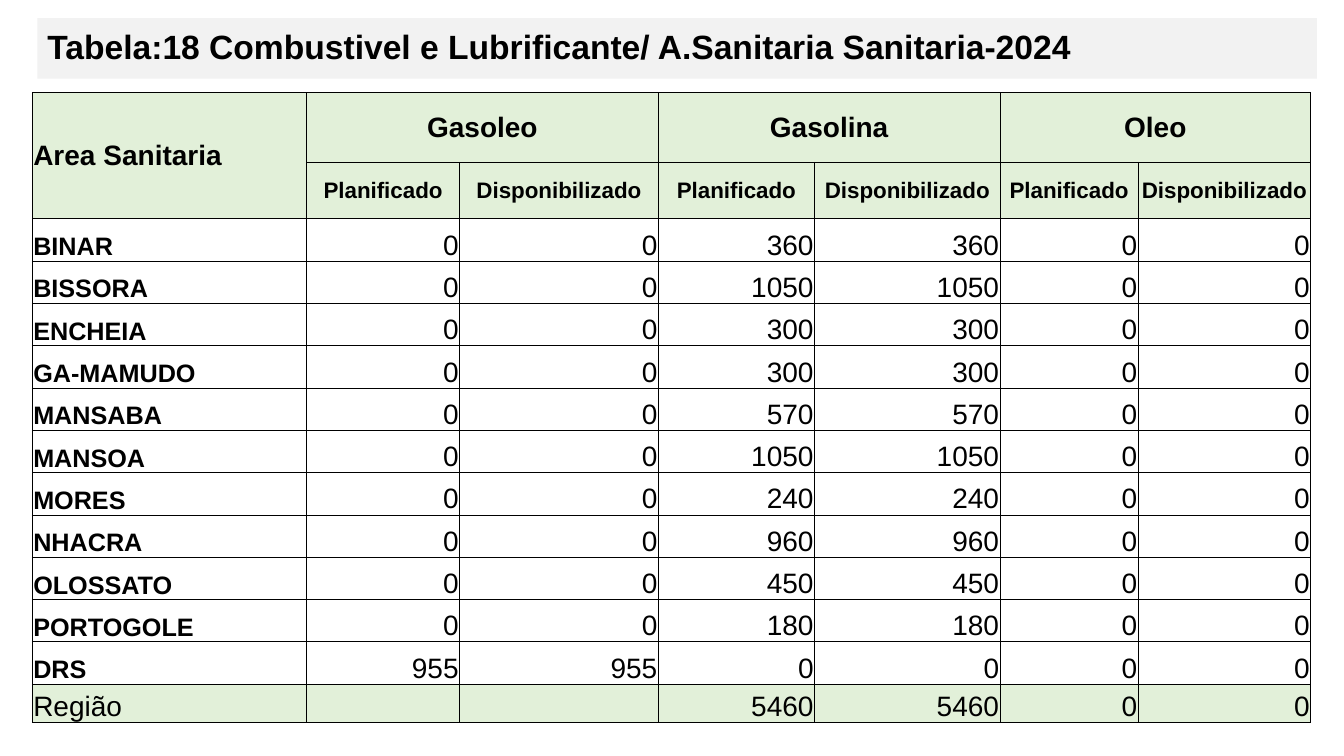
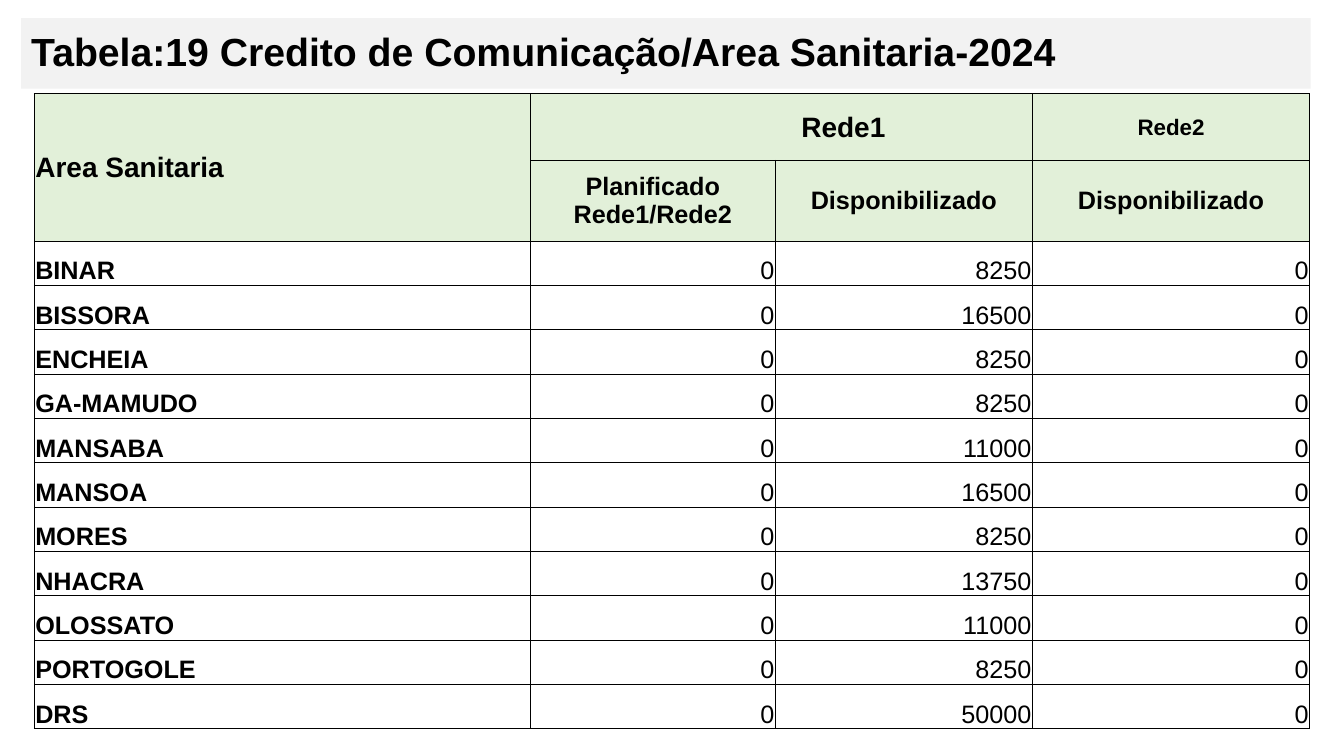
from dataclasses import dataclass

from lxml import etree
from pptx import Presentation
from pptx.dml.color import RGBColor
from pptx.enum.text import MSO_ANCHOR, MSO_AUTO_SIZE, PP_ALIGN
from pptx.oxml.ns import qn
from pptx.util import Inches, Pt

LEFT, CENTER, RIGHT = PP_ALIGN.LEFT, PP_ALIGN.CENTER, PP_ALIGN.RIGHT
MIDDLE, BOTTOM = MSO_ANCHOR.MIDDLE, MSO_ANCHOR.BOTTOM

BLACK = RGBColor(0x00, 0x00, 0x00)
TITLE_BAND = RGBColor(0xF2, 0xF2, 0xF2)
HEADER_GREEN = RGBColor(0xE2, 0xF0, 0xD9)
FONT = "Arial"
BORDER_PT = 0.5
CELL_INSET = 0.01
HEADING_SIZE = 20
AREA_SIZE = 18
TITLE_ONLY = 5

AREAS = ["BINAR", "BISSORA", "ENCHEIA", "GA-MAMUDO", "MANSABA", "MANSOA",
         "MORES", "NHACRA", "OLOSSATO", "PORTOGOLE", "DRS"]
PLANNED, SUPPLIED = "Planificado", "Disponibilizado"


@dataclass(frozen=True)
class Group:
    """A top heading above one or more columns."""
    label: str
    columns: list[str]
    size: int = HEADING_SIZE
    indent: float = CELL_INSET


@dataclass(frozen=True)
class Report:
    """One slide: a title band and a table by health area."""
    title: str
    title_box: tuple[float, float, float, float]
    title_size: int
    table_at: tuple[float, float]
    column_widths: list[float]
    header_heights: tuple[float, float]
    row_height: float
    groups: list[Group]
    column_size: int
    value_size: int
    values: list[list[int]]
    total: list[int | None] | None = None
    total_height: float = 0.38


# Values by area, in the order of AREAS
petrol = [360, 1050, 300, 300, 570, 1050, 240, 960, 450, 180, 0]
diesel = [0] * 10 + [955]
credit = [8250, 16500, 8250, 8250, 11000, 16500, 8250, 13750, 11000, 8250, 50000]

REPORTS = [
    Report(
        title="Tabela:18 Combustivel e Lubrificante/ A.Sanitaria Sanitaria-2024",
        title_box=(0.37, 0.18, 12.69, 0.6), title_size=24,
        table_at=(0.32, 0.92),
        column_widths=[2.72, 1.52, 1.97, 1.55, 1.84, 1.37, 1.71],
        header_heights=(0.69, 0.56), row_height=0.42,
        groups=[Group(fuel, [PLANNED, SUPPLIED])
                for fuel in ("Gasoleo", "Gasolina", "Oleo")],
        column_size=16, value_size=20,
        values=[[d, d, p, p, 0, 0] for d, p in zip(diesel, petrol)],
        total=[None, None, 5460, 5460, 0, 0],
    ),
    Report(
        title="Tabela:19 Credito de Comunicação/Area Sanitaria-2024",
        title_box=(0.21, 0.18, 12.79, 0.7), title_size=28,
        table_at=(0.34, 0.93),
        column_widths=[4.92, 2.43, 2.55, 2.75],
        header_heights=(0.66, 0.8), row_height=0.44,
        groups=[Group("Rede1", ["Planificado Rede1/Rede2", SUPPLIED], indent=1.24),
                Group("Rede2", [SUPPLIED], size=16)],
        column_size=18, value_size=18,
        values=[[0, amount, 0] for amount in credit],
    ),
]


def write(frame, text: str, *, size: int, bold: bool = False,
          align=LEFT, line_spacing: float = 1.0) -> None:
    """Put one formatted paragraph into a text frame."""
    paragraph = frame.paragraphs[0]
    paragraph.alignment = align
    paragraph.line_spacing = line_spacing
    run = paragraph.add_run()
    run.text = text
    run.font.name = FONT
    run.font.size = Pt(size)
    run.font.bold = bold
    run.font.color.rgb = BLACK


def add_borders(cell) -> None:
    properties = cell._tc.get_or_add_tcPr()
    for side in ("a:lnL", "a:lnR", "a:lnT", "a:lnB"):
        line = etree.SubElement(properties, qn(side), w=str(Pt(BORDER_PT)))
        fill = etree.SubElement(line, qn("a:solidFill"))
        etree.SubElement(fill, qn("a:srgbClr"), val=str(BLACK))


def fill_cell(cell, text: str, *, anchor=BOTTOM, shaded: bool = False,
              indent: float = CELL_INSET, **text_format) -> None:
    cell.margin_left = Inches(indent)
    cell.margin_right = cell.margin_top = Inches(CELL_INSET)
    cell.margin_bottom = 0
    cell.vertical_anchor = anchor
    if shaded:
        cell.fill.solid()
        cell.fill.fore_color.rgb = HEADER_GREEN
    else:
        cell.fill.background()
    write(cell.text_frame, text, **text_format)


def add_title(slide, report: Report) -> None:
    title = slide.shapes.title
    title.left, title.top, title.width, title.height = map(Inches, report.title_box)
    title.fill.solid()
    title.fill.fore_color.rgb = TITLE_BAND
    frame = title.text_frame
    frame.auto_size = MSO_AUTO_SIZE.NONE
    frame.word_wrap = True
    frame.vertical_anchor = MIDDLE
    write(frame, report.title, size=report.title_size, bold=True, line_spacing=0.9)


def fill_header(table, report: Report) -> None:
    heading = dict(anchor=MIDDLE, shaded=True, bold=True)
    table.cell(0, 0).merge(table.cell(1, 0))
    fill_cell(table.cell(0, 0), "Area Sanitaria", size=HEADING_SIZE, **heading)
    first = 1
    for group in report.groups:
        top = table.cell(0, first)
        last = first + len(group.columns) - 1
        if last > first:
            top.merge(table.cell(0, last))
        fill_cell(top, group.label, size=group.size, indent=group.indent,
                  align=CENTER, **heading)
        for column, label in enumerate(group.columns, first):
            fill_cell(table.cell(1, column), label, size=report.column_size,
                      align=CENTER, **heading)
        first = last + 1


def fill_row(table, row: int, label: str, values: list[int | None],
             report: Report, is_total: bool = False) -> None:
    fill_cell(table.cell(row, 0), label, shaded=is_total, bold=not is_total,
              size=report.value_size if is_total else AREA_SIZE)
    for column, value in enumerate(values, 1):
        fill_cell(table.cell(row, column), "" if value is None else str(value),
                  shaded=is_total, size=report.value_size, align=RIGHT)


def add_area_table(slide, report: Report) -> None:
    heights = [*report.header_heights, *[report.row_height] * len(AREAS)]
    if report.total:
        heights.append(report.total_height)
    widths = report.column_widths
    left, top = report.table_at
    table = slide.shapes.add_table(
        len(heights), len(widths), Inches(left), Inches(top),
        Inches(sum(widths)), Inches(sum(heights))).table
    table.first_row = table.horz_banding = False
    for column, width in zip(table.columns, widths):
        column.width = Inches(width)
    for row, height in zip(table.rows, heights):
        row.height = Inches(height)
    for cell in table.iter_cells():
        add_borders(cell)

    fill_header(table, report)
    for row, (area, values) in enumerate(zip(AREAS, report.values), 2):
        fill_row(table, row, area, values, report)
    if report.total:
        fill_row(table, len(heights) - 1, "Região", report.total, report, is_total=True)


def main() -> None:
    deck = Presentation()
    deck.slide_width, deck.slide_height = Inches(13.33), Inches(7.5)
    for report in REPORTS:
        slide = deck.slides.add_slide(deck.slide_layouts[TITLE_ONLY])
        add_title(slide, report)
        add_area_table(slide, report)
    deck.save("out.pptx")


if __name__ == "__main__":
    main()
